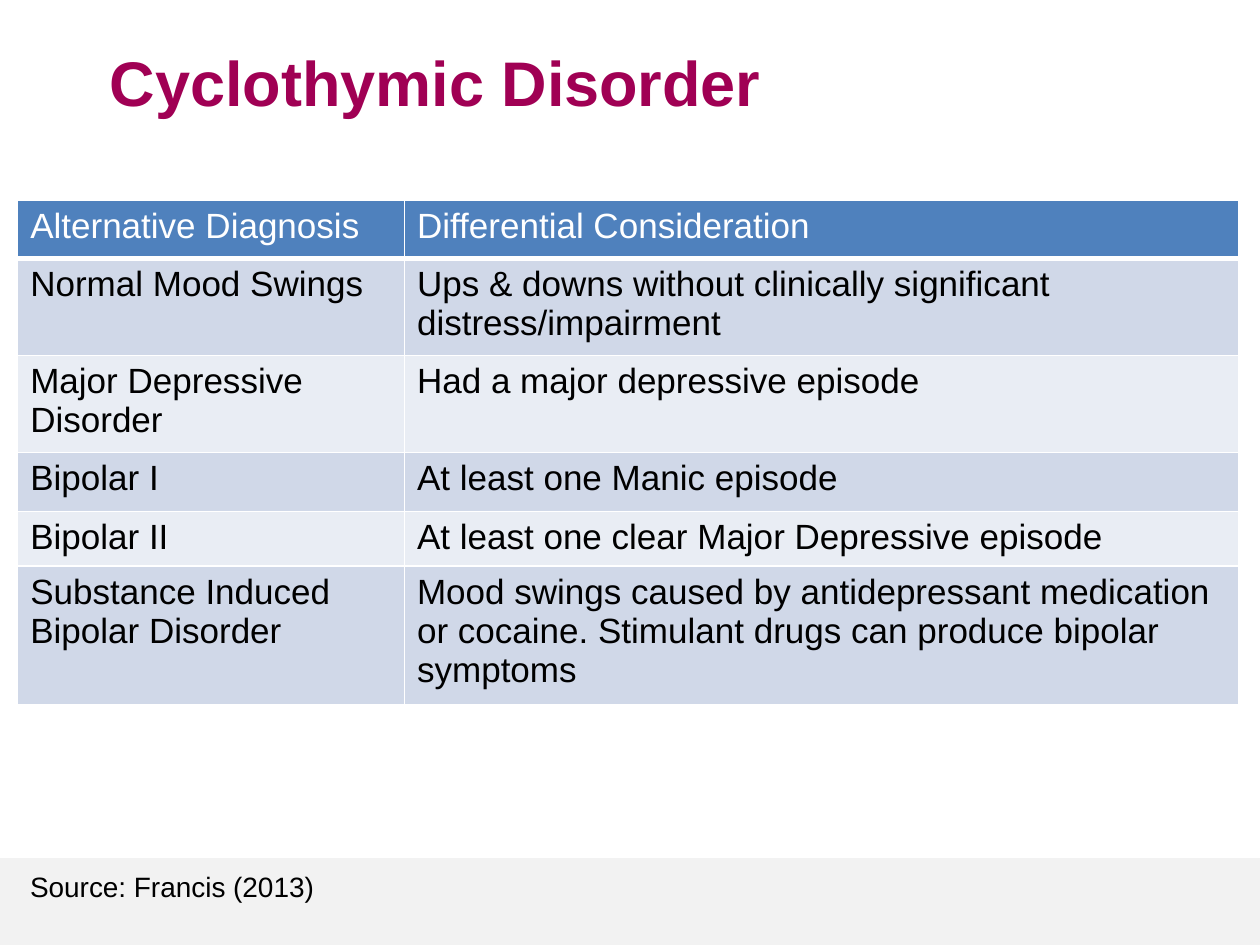
from dataclasses import dataclass

from lxml import etree
from pptx import Presentation
from pptx.dml.color import RGBColor
from pptx.enum.shapes import MSO_SHAPE
from pptx.enum.text import MSO_ANCHOR, PP_ALIGN
from pptx.oxml.ns import qn
from pptx.util import Inches, Pt

RECTANGLE = MSO_SHAPE.RECTANGLE
CENTER, LEFT = PP_ALIGN.CENTER, PP_ALIGN.LEFT
MIDDLE, TOP = MSO_ANCHOR.MIDDLE, MSO_ANCHOR.TOP
BLANK_LAYOUT = 6


@dataclass(frozen=True)
class Theme:
    font: str = "Arial"
    title: str = "A00054"
    ink: str = "000000"
    paper: str = "FFFFFF"
    footer: str = "F2F2F2"
    header: str = "4F81BD"
    bands: tuple[str, str] = ("D0D8E8", "E9EDF4")
    title_size: int = 36
    table_size: int = 20
    source_size: int = 16
    rule: int = 1
    header_rule: int = 3


@dataclass(frozen=True)
class Area:
    left: float
    top: float
    width: float
    height: float

    def emu(self) -> tuple:
        return tuple(map(Inches, (self.left, self.top, self.width, self.height)))


@dataclass(frozen=True)
class Differential:
    diagnosis: str
    consideration: str
    height: float


THEME = Theme()
WIDTH, HEIGHT = 10, 7.5
MARGIN = 0.14
FOOTER_TOP = 6.81
COLUMNS = (3.07, 6.62)
ROWS = (
    Differential("Alternative Diagnosis", "Differential Consideration", 0.46),
    Differential("Normal Mood Swings",
                 "Ups & downs without clinically significant distress/impairment", 0.77),
    Differential("Major Depressive Disorder", "Had a major depressive episode", 0.77),
    Differential("Bipolar I", "At least one Manic episode", 0.47),
    Differential("Bipolar II", "At least one clear Major Depressive episode", 0.43),
    Differential("Substance Induced Bipolar Disorder",
                 "Mood swings caused by antidepressant medication or cocaine. "
                 "Stimulant drugs can produce bipolar symptoms", 1.1),
)


def add_run(paragraph, words: str, size: int, color: str, bold: bool = False) -> None:
    run = paragraph.add_run()
    run.text = words
    run.font.name = THEME.font
    run.font.size = Pt(size)
    run.font.bold = bold
    run.font.color.rgb = RGBColor.from_string(color)


def add_text(slide, area: Area, words: str, size: int, color: str, bold: bool = False,
             align=LEFT, anchor=TOP, spacing: float = 1.0) -> None:
    frame = slide.shapes.add_textbox(*area.emu()).text_frame
    frame.word_wrap = True
    frame.vertical_anchor = anchor
    paragraph = frame.paragraphs[0]
    paragraph.alignment = align
    paragraph.line_spacing = spacing
    add_run(paragraph, words, size, color, bold)


def add_footer(slide) -> None:
    area = Area(0, FOOTER_TOP, WIDTH, HEIGHT - FOOTER_TOP)
    band = slide.shapes.add_shape(RECTANGLE, *area.emu())
    band.shadow.inherit = False
    band.fill.solid()
    band.fill.fore_color.rgb = RGBColor.from_string(THEME.footer)
    band.line.fill.background()


def set_borders(cell, bottom: int) -> None:
    """Rule all four sides; borders must precede the fill in the cell properties."""
    properties = cell._tc.get_or_add_tcPr()
    widths = {"L": THEME.rule, "R": THEME.rule, "T": THEME.rule, "B": bottom}
    for position, (side, width) in enumerate(widths.items()):
        line = etree.Element(qn(f"a:ln{side}"), w=str(Pt(width)))
        fill = etree.SubElement(line, qn("a:solidFill"))
        etree.SubElement(fill, qn("a:srgbClr"), val=THEME.paper)
        properties.insert(position, line)


def fill_cell(cell, words: str, fill: str, color: str, bottom: int) -> None:
    cell.fill.solid()
    cell.fill.fore_color.rgb = RGBColor.from_string(fill)
    cell.margin_left = cell.margin_right = Inches(0.1)
    cell.margin_top = cell.margin_bottom = Inches(0.05)
    add_run(cell.text_frame.paragraphs[0], words, THEME.table_size, color)
    set_borders(cell, bottom)


def add_differentials(slide) -> None:
    area = Area(MARGIN, 1.59, sum(COLUMNS), sum(row.height for row in ROWS))
    table = slide.shapes.add_table(len(ROWS), len(COLUMNS), *area.emu()).table
    for column, width in zip(table.columns, COLUMNS):
        column.width = Inches(width)
    for index, entry in enumerate(ROWS):
        table.rows[index].height = Inches(entry.height)
        if index == 0:
            style = (THEME.header, THEME.paper, THEME.header_rule)
        else:
            style = (THEME.bands[(index - 1) % 2], THEME.ink, THEME.rule)
        for column, words in enumerate((entry.diagnosis, entry.consideration)):
            fill_cell(table.cell(index, column), words, *style)


def main() -> None:
    deck = Presentation()
    deck.slide_width, deck.slide_height = Inches(WIDTH), Inches(HEIGHT)
    slide = deck.slides.add_slide(deck.slide_layouts[BLANK_LAYOUT])
    add_footer(slide)
    add_text(slide, Area(0.5, 0.25, 5.91, 0.9), "Cyclothymic Disorder", THEME.title_size,
             THEME.title, bold=True, align=CENTER, anchor=MIDDLE, spacing=0.8)
    add_differentials(slide)
    add_text(slide, Area(MARGIN, 6.85, 3.28, 0.37), "Source: Francis (2013)",
             THEME.source_size, THEME.ink)
    deck.save("out.pptx")


if __name__ == "__main__":
    main()
